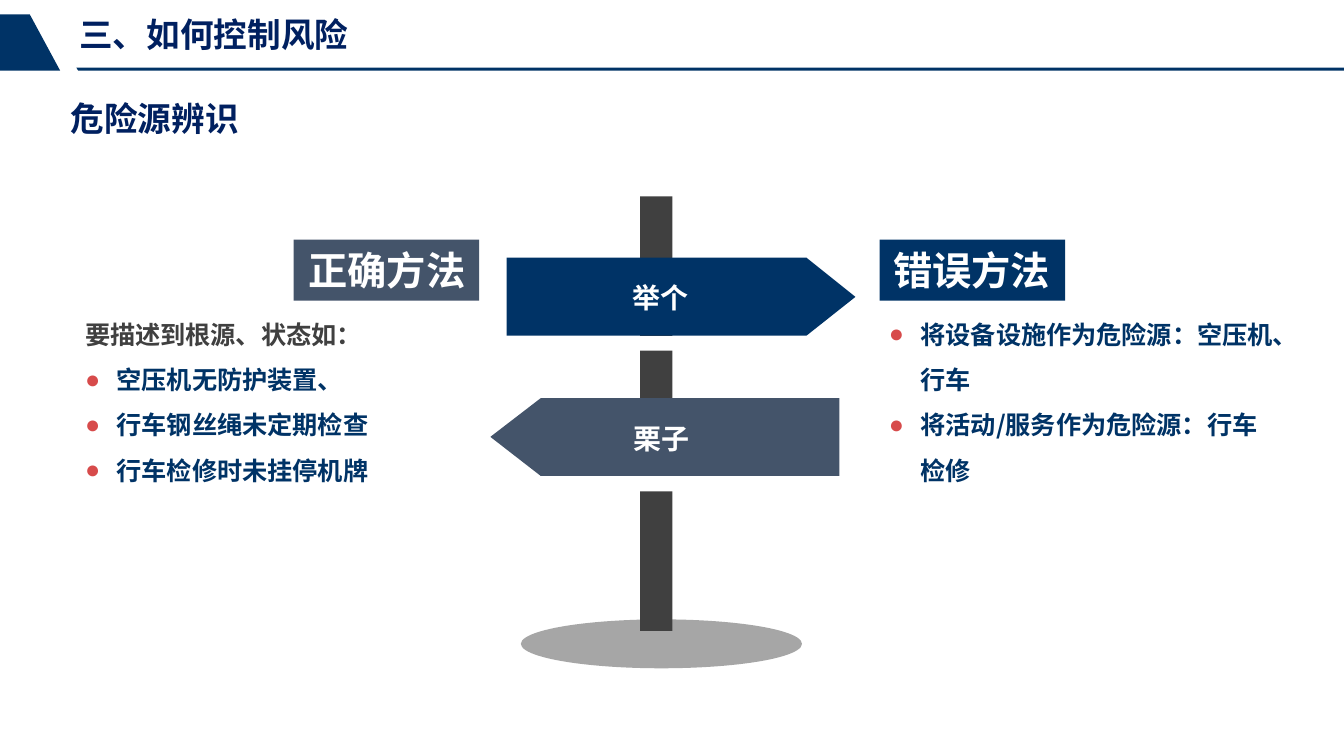
"""Build the slide on right and wrong ways to describe a hazard."""
from lxml.etree import SubElement
from pptx import Presentation
from pptx.dml.color import RGBColor
from pptx.enum.shapes import MSO_SHAPE
from pptx.enum.text import PP_ALIGN
from pptx.oxml.ns import qn
from pptx.util import Cm, Pt

NAVY, SLATE, INK, DARK, WHITE = "003366", "44546A", "002060", "404040", "FFFFFF"
CJK = "Noto Sans CJK SC"


def paint(shape, color):
    shape.shadow.inherit = False
    shape.fill.solid()
    shape.fill.fore_color.rgb = RGBColor.from_string(color)
    shape.line.fill.background()


def write(para, text, size, color, font, align=PP_ALIGN.LEFT, dot=False):
    para.text = text
    para.alignment = align
    props = para._p.get_or_add_pPr()
    if dot:
        para.line_spacing = 1.5
        props.set("marL", str(Cm(0.84)))
        props.set("indent", str(Cm(-0.84)))
        tint = SubElement(props, qn("a:buClr"))
        SubElement(tint, qn("a:srgbClr"), val="D74B4B")
        SubElement(props, qn("a:buFont"), typeface="Arial")
        SubElement(props, qn("a:buChar"), char="●")
    para.font.size = Pt(size)
    para.font.bold = True
    para.font.color.rgb = RGBColor.from_string(color)
    para.font.name = font
    SubElement(props.find(qn("a:defRPr")), qn("a:ea"), typeface=CJK)


deck = Presentation()
deck.slide_width, deck.slide_height = Cm(35.71), Cm(20.09)
slide = deck.slides.add_slide(deck.slide_layouts[6])
shapes = slide.shapes

base = shapes.add_shape(MSO_SHAPE.OVAL, Cm(13.84), Cm(16.46), Cm(7.47), Cm(1.3))
paint(base, "A6A6A6")

for top, height in [(5.22, 3.71), (9.32, 3.33), (13.06, 3.71)]:
    post = shapes.add_shape(MSO_SHAPE.RECTANGLE, Cm(17.01), Cm(top), Cm(0.86), Cm(height))
    paint(post, DARK)

outlines = [
    (NAVY, [(2.03, 1.8), (35.71, 1.8), (35.71, 1.88), (2.08, 1.88)]),
    (NAVY, [(0.79, 0.38), (1.6, 1.88), (0, 1.88), (0, 0.38)]),
    (SLATE, [(13.03, 11.61), (14.37, 10.58), (22.3, 10.58), (22.3, 12.65), (14.37, 12.65)]),
    (NAVY, [(22.73, 7.89), (21.43, 8.92), (13.46, 8.92), (13.46, 6.85), (21.43, 6.85)]),
]
for color, points in outlines:
    first, *rest = [(Cm(x), Cm(y)) for x, y in points]
    pen = shapes.build_freeform(*first)
    pen.add_line_segments(rest, close=True)
    paint(pen.convert_to_shape(), color)

for left, top, text in [(2.11, 0.38, "三、如何控制风险"), (1.88, 2.59, "危险源辨识")]:
    frame = shapes.add_textbox(Cm(left), Cm(top), Cm(11.53), Cm(1.09)).text_frame
    frame.word_wrap = True
    frame.margin_left = frame.margin_right = frame.margin_top = frame.margin_bottom = 0
    write(frame.paragraphs[0], text, 25.3, INK, "Arial")

for left, text, color, align in [
    (7.8, "正确方法", SLATE, PP_ALIGN.RIGHT),
    (23.37, "错误方法", NAVY, PP_ALIGN.LEFT),
]:
    label = shapes.add_shape(MSO_SHAPE.RECTANGLE, Cm(left), Cm(6.37), Cm(4.93), Cm(1.62))
    paint(label, color)
    frame = label.text_frame
    frame.word_wrap = False
    frame.margin_left = frame.margin_right = Cm(0.36)
    frame.margin_top = frame.margin_bottom = Cm(0.18)
    write(frame.paragraphs[0], text, 29.6, WHITE, "Lato", align)

lists = [
    (2.01, 6.1, "要描述到根源、状态如：",
     ["空压机无防护装置、", "行车钢丝绳未定期检查", "行车检修时未挂停机牌"]),
    (23.37, 4.98, None,
     ["将设备设施作为危险源：空压机、行车", "将活动/服务作为危险源：行车检修"]),
]
for left, height, lead, items in lists:
    frame = shapes.add_textbox(Cm(left), Cm(7.95), Cm(10.72), Cm(height)).text_frame
    frame.word_wrap = True
    para = frame.paragraphs[0]
    if lead:
        write(para, lead, 19, DARK, CJK)
        para.line_spacing = 1.5
        para = frame.add_paragraph()
    write(para, items[0], 19, NAVY, CJK, dot=True)
    for item in items[1:]:
        write(frame.add_paragraph(), item, 19, NAVY, CJK, dot=True)

for left, top, width, text in [(15.67, 7.34, 3.78, "举个"), (15.29, 11.07, 4.55, "栗子")]:
    frame = shapes.add_textbox(Cm(left), Cm(top), Cm(width), Cm(1.17)).text_frame
    frame.word_wrap = True
    write(frame.paragraphs[0], text, 21.1, WHITE, "Lato", PP_ALIGN.CENTER)

deck.save("out.pptx")
